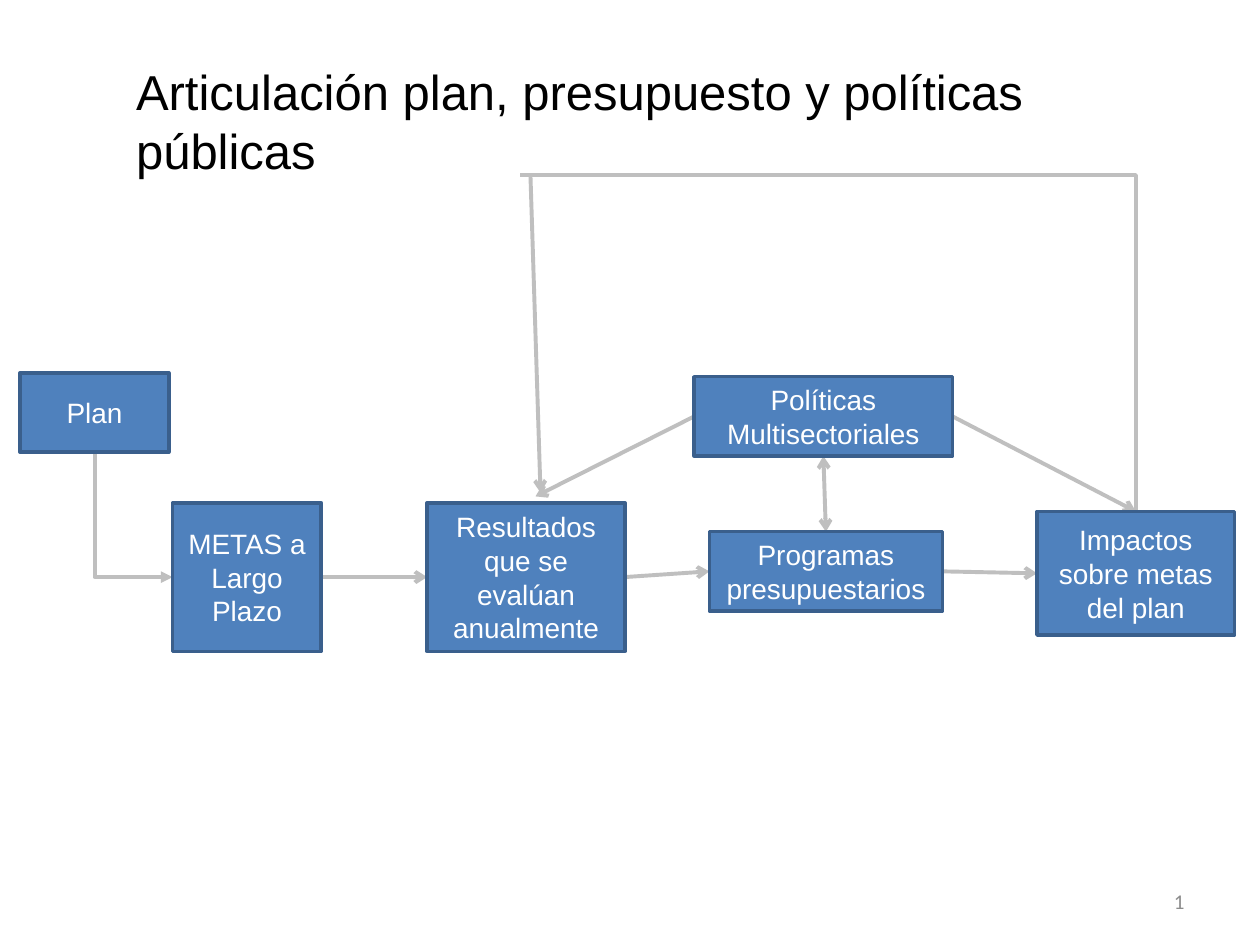
"""Builds the slide on how plan, budget and public policies fit together."""
from lxml import etree
from pptx import Presentation
from pptx.dml.color import RGBColor
from pptx.enum.shapes import MSO_CONNECTOR, MSO_SHAPE
from pptx.enum.text import MSO_ANCHOR, PP_ALIGN
from pptx.oxml.ns import qn
from pptx.util import Inches, Pt

RECT = MSO_SHAPE.RECTANGLE
STRAIGHT, ELBOW = MSO_CONNECTOR.STRAIGHT, MSO_CONNECTOR.ELBOW
LEFT, CENTER, RIGHT = PP_ALIGN.LEFT, PP_ALIGN.CENTER, PP_ALIGN.RIGHT
TOP, MIDDLE = MSO_ANCHOR.TOP, MSO_ANCHOR.MIDDLE
SIDE_TOP, SIDE_LEFT, SIDE_BOTTOM, SIDE_RIGHT = range(4)

THEME = {
    "fill": "4F81BD", "border": "3A5F8C", "arrow": "BFBFBF",
    "border_width": 2, "arrow_width": 2.25,
    "title": {"name": "Arial", "size": 28, "color": "000000"},
    "box": {"name": "Arial", "size": 16, "color": "FFFFFF"},
    "number": {"name": "Calibri", "size": 12, "color": "8C8C8C"},
}

COLS, ROWS = 100, 75
TITLE = ("Articulación plan, presupuesto y políticas públicas", (9.8, 4.4, 78, 10.4))
NUMBER = ("1", (71.7, 69.5, 23.3, 4))
BOXES = {
    "plan": ("Plan", (1.6, 29.6, 11.8, 6.3)),
    "metas": ("METAS a Largo Plazo", (13.7, 39.9, 11.8, 11.8)),
    "resultados": ("Resultados que se evalúan anualmente", (33.9, 39.9, 15.7, 11.8)),
    "politicas": ("Políticas Multisectoriales", (55.1, 29.9, 20.5, 6.3)),
    "programas": ("Programas presupuestarios", (56.3, 42.2, 18.5, 6.3)),
    "impactos": ("Impactos sobre metas del plan", (82.3, 40.6, 15.7, 9.8)),
}
LINKS = [
    (("metas", SIDE_RIGHT), ("resultados", SIDE_LEFT), {"tailEnd": "arrow"}),
    (("resultados", SIDE_RIGHT), ("programas", SIDE_LEFT), {"tailEnd": "arrow"}),
    (("programas", SIDE_RIGHT), ("impactos", SIDE_LEFT), {"tailEnd": "arrow"}),
    (("politicas", SIDE_RIGHT), ("impactos", SIDE_TOP), {"tailEnd": "arrow"}),
    (("politicas", SIDE_BOTTOM), ("programas", SIDE_TOP), {"headEnd": "arrow", "tailEnd": "arrow"}),
    (("politicas", SIDE_LEFT), (42.5, 39.4), {"tailEnd": "arrow"}),
    ((42.1, 13.9), (42.9, 39.1), {"tailEnd": "arrow"}),
]
ELBOWS = [
    (("plan", SIDE_BOTTOM), ("metas", SIDE_LEFT), {"tailEnd": "triangle"}),
    (("impactos", SIDE_TOP), (41.3, 13.9), {}),
]

prs = Presentation()
prs.slide_width, prs.slide_height = Inches(10), Inches(7.5)
s = prs.slides.add_slide(prs.slide_layouts[5])
boxes = {}


def place(col, row):
    return int(prs.slide_width * col / COLS), int(prs.slide_height * row / ROWS)


def frame(area):
    return place(*area[:2]) + place(*area[2:])


def write(sp, text, style, align, anchor):
    tf = sp.text_frame
    tf.word_wrap, tf.vertical_anchor = True, anchor
    p = tf.paragraphs[0]
    p.alignment = align
    r = p.add_run()
    r.text = text
    font = THEME[style]
    for name, value in {"name": font["name"], "size": Pt(font["size"])}.items():
        setattr(r.font, name, value)
    r.font.color.rgb = RGBColor.from_string(font["color"])
    return r


def outline(sp, color, width):
    sp.line.color.rgb = RGBColor.from_string(color)
    sp.line.width = Pt(width)


def add_box(text, area):
    sp = s.shapes.add_shape(RECT, *frame(area))
    sp.shadow.inherit = False
    sp.fill.solid()
    sp.fill.fore_color.rgb = RGBColor.from_string(THEME["fill"])
    outline(sp, THEME["border"], THEME["border_width"])
    write(sp, text, "box", CENTER, MIDDLE)
    return sp


def is_joint(end):
    return end[0] in boxes


def point(end):
    if not is_joint(end):
        return place(*end)
    sp, side = boxes[end[0]], end[1]
    dx, dy = [(0.5, 0), (0, 0.5), (0.5, 1), (1, 0.5)][side]
    return int(sp.left + sp.width * dx), int(sp.top + sp.height * dy)


def add_link(kind, start, end, heads):
    cxn = s.shapes.add_connector(kind, *point(start), *point(end))
    outline(cxn, THEME["arrow"], THEME["arrow_width"])
    ln = cxn.line._get_or_add_ln()
    for tag, head in heads.items():
        etree.SubElement(ln, qn(f"a:{tag}")).set("type", head)
    etree.SubElement(cxn._element.spPr, qn("a:effectLst"))
    return cxn


def add_straight(start, end, heads):
    cxn = add_link(STRAIGHT, start, end, heads)
    for joint, connect in ((start, cxn.begin_connect), (end, cxn.end_connect)):
        if is_joint(joint):
            connect(boxes[joint[0]], joint[1])


def add_elbow(start, end, heads):
    cxn = add_link(ELBOW, start, end, heads)
    (x1, y1), (x2, y2) = point(start), point(end)
    w, h = abs(y2 - y1), abs(x2 - x1)
    cxn.left, cxn.top = (x1 + x2 - w) // 2, (y1 + y2 - h) // 2
    cxn.width, cxn.height = w, h
    xfrm = cxn._element.spPr.find(qn("a:xfrm"))
    down = y2 > y1
    for name, value in {"rot": "16200000", "flipH": str(int(down)), "flipV": str(int(not down))}.items():
        xfrm.set(name, value)
    cxn._element.spPr.find(qn("a:prstGeom")).set("prst", "bentConnector2")


def main():
    title = s.shapes.title
    title.left, title.top, title.width, title.height = frame(TITLE[1])
    write(title, TITLE[0], "title", LEFT, TOP)

    for name, (text, area) in BOXES.items():
        boxes[name] = add_box(text, area)
    for link in ELBOWS:
        add_elbow(*link)
    for link in LINKS:
        add_straight(*link)
    for sp in boxes.values():
        s.shapes._spTree.append(sp._element)

    r = write(s.shapes.add_textbox(*frame(NUMBER[1])), NUMBER[0], "number", RIGHT, MIDDLE)
    fld = r._r
    fld.tag = qn("a:fld")
    fld.set("id", "{B6F15528-21DE-4FAA-801E-634DDDAF4B2B}")
    fld.set("type", "slidenum")
    prs.save("out.pptx")


if __name__ == "__main__":
    main()
